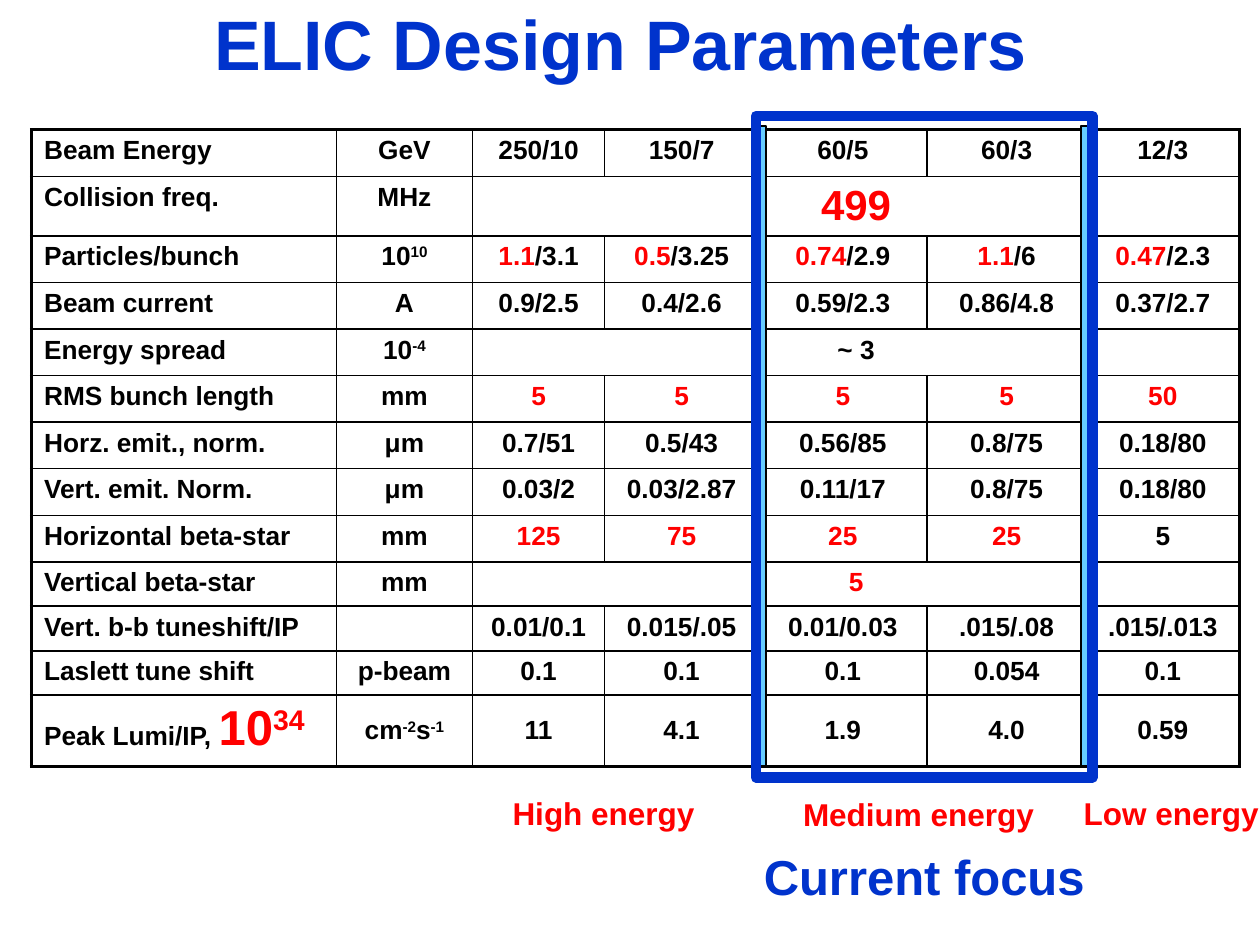
from lxml.etree import SubElement
from pptx import Presentation
from pptx.dml.color import RGBColor as Color
from pptx.enum.shapes import MSO_SHAPE as Shape
from pptx.enum.text import MSO_ANCHOR as Anchor, PP_ALIGN as Align
from pptx.oxml.ns import qn
from pptx.util import Inches, Pt

COLORS = {name: Color.from_string(value) for name, value in {
    "blue": "0033CC", "red": "FF0000", "black": "000000", "sky": "66CCFF"}.items()}

ROWS = [
    ["Beam Energy", "GeV", "250/10", "150/7", "60/5", "60/3", "12/3"],
    ["Collision freq.", "MHz", "*499*"],
    ["Particles/bunch", "10^10^", "*1.1*/3.1", "*0.5*/3.25", "*0.74*/2.9", "*1.1*/6", "*0.47*/2.3"],
    ["Beam current", "A", "0.9/2.5", "0.4/2.6", "0.59/2.3", "0.86/4.8", "0.37/2.7"],
    ["Energy spread", "10^-4^", "~ 3"],
    ["RMS bunch length", "mm", "*5*", "*5*", "*5*", "*5*", "*50*"],
    ["Horz. emit., norm.", "μm", "0.7/51", "0.5/43", "0.56/85", "0.8/75", "0.18/80"],
    ["Vert. emit. Norm.", "μm", "0.03/2", "0.03/2.87", "0.11/17", "0.8/75", "0.18/80"],
    ["Horizontal beta-star", "mm", "*125*", "*75*", "*25*", "*25*", "5"],
    ["Vertical beta-star", "mm", "*5*"],
    ["Vert. b-b tuneshift/IP", "", "0.01/0.1", "0.015/.05", "0.01/0.03", ".015/.08", ".015/.013"],
    ["Laslett tune shift", "p-beam", "0.1", "0.1", "0.1", "0.054", "0.1"],
    ["Peak Lumi/IP, *10^34^*", "cm^-2^s^-1^", "11", "4.1", "1.9", "4.0", "0.59"],
]
COLUMN_WIDTHS = [2.42, 1.08, 1.05, 1.22, 1.34, 1.26, 1.22]
ROW_HEIGHTS = [0.37] * 9 + [0.35] * 3 + [0.57]
RED_SIZES = {"*499*": 24, "Peak Lumi/IP, *10^34^*": 28}


def add_span(para, text, size, color):
    span = para.add_run()
    span.text = text
    for name, value in {"name": "Arial", "size": Pt(size), "bold": True}.items():
        setattr(span.font, name, value)
    span.font.color.rgb = COLORS[color]
    return span


def add_frame(left, top, width, height, line, weight):
    frame = page.shapes.add_shape(
        Shape.RECTANGLE, Inches(left), Inches(top), Inches(width), Inches(height))
    frame.shadow.inherit = False
    frame.line.color.rgb = COLORS[line]
    frame.line.width = Pt(weight)
    return frame


deck = Presentation()
deck.slide_width, deck.slide_height = Inches(10), Inches(7.5)
page = deck.slides.add_slide(deck.slide_layouts[5])

title = page.shapes.title
for name, value in {"left": 0, "top": 0, "width": deck.slide_width, "height": Inches(0.67)}.items():
    setattr(title, name, value)
title.text_frame.vertical_anchor = Anchor.MIDDLE
para = title.text_frame.paragraphs[0]
para.alignment = Align.CENTER
add_span(para, "ELIC Design Parameters ", 40, "blue")

table = page.shapes.add_table(
    len(ROWS), len(COLUMN_WIDTHS), Inches(0.25), Inches(1.03), Inches(9.58), Inches(5.05)).table
table.first_row = table.horz_banding = False
for column, width in zip(table.columns, COLUMN_WIDTHS):
    column.width = Inches(width)
for row, height in zip(table.rows, ROW_HEIGHTS):
    row.height = Inches(height)

last_row, last_column = len(ROWS) - 1, len(COLUMN_WIDTHS) - 1
for r, texts in enumerate(ROWS):
    merged = len(texts) == 3
    if merged:
        table.cell(r, 2).merge(table.cell(r, last_column))
    for c in range(last_column + 1):
        cell = table.cell(r, c)
        text = texts[c] if c < len(texts) else ""
        outer = {"L": c == 0, "R": c == last_column or (merged and c == 2),
                 "T": r == 0, "B": r == last_row}
        properties = cell._tc.get_or_add_tcPr()
        for side, thick in outer.items():
            border = SubElement(properties, qn(f"a:ln{side}"), w=str(Pt(2.25 if thick else 1)))
            fill = SubElement(border, qn("a:solidFill"))
            SubElement(fill, qn("a:srgbClr"), val=str(COLORS["black"]))
        cell.fill.background()
        cell.vertical_anchor = Anchor.MIDDLE if r == last_row and c else Anchor.TOP
        para = cell.text_frame.paragraphs[0]
        para.alignment = Align.CENTER if c else Align.LEFT
        if not text:
            SubElement(para._p, qn("a:endParaRPr"), sz="1500")
            continue
        for i, part in enumerate(text.split("*")):
            color, size = ("red", RED_SIZES.get(text, 15)) if i % 2 else ("black", 15)
            for j, piece in enumerate(part.split("^")):
                if piece:
                    span = add_span(para, piece, size, color)
                    if j % 2:
                        span._r.get_or_add_rPr().set("baseline", "30000")

for left in (6, 8.58):
    bar = add_frame(left, 1, 0.08, 5.08, "black", 0.75)
    bar.fill.solid()
    bar.fill.fore_color.rgb = COLORS["sky"]

for text, left, top, width, height, size, color in [
    ("High energy", 3.75, 6.25, 2.08, 0.4, 18, "red"),
    ("Medium energy", 6.25, 6.26, 2.08, 0.4, 18, "red"),
    ("Low energy", 8.42, 6.25, 1.75, 0.4, 18, "red"),
    ("Current focus", 5.92, 6.67, 2.83, 0.57, 28, "blue"),
]:
    box = page.shapes.add_textbox(Inches(left), Inches(top), Inches(width), Inches(height))
    box.text_frame.word_wrap = True
    para = box.text_frame.paragraphs[0]
    para.alignment = Align.CENTER
    add_span(para, text, size, color)

focus = add_frame(6, 0.92, 2.67, 5.25, "blue", 6)
focus.fill.background()
SubElement(focus.line._get_or_add_ln(), qn("a:round"))

deck.save("out.pptx")
